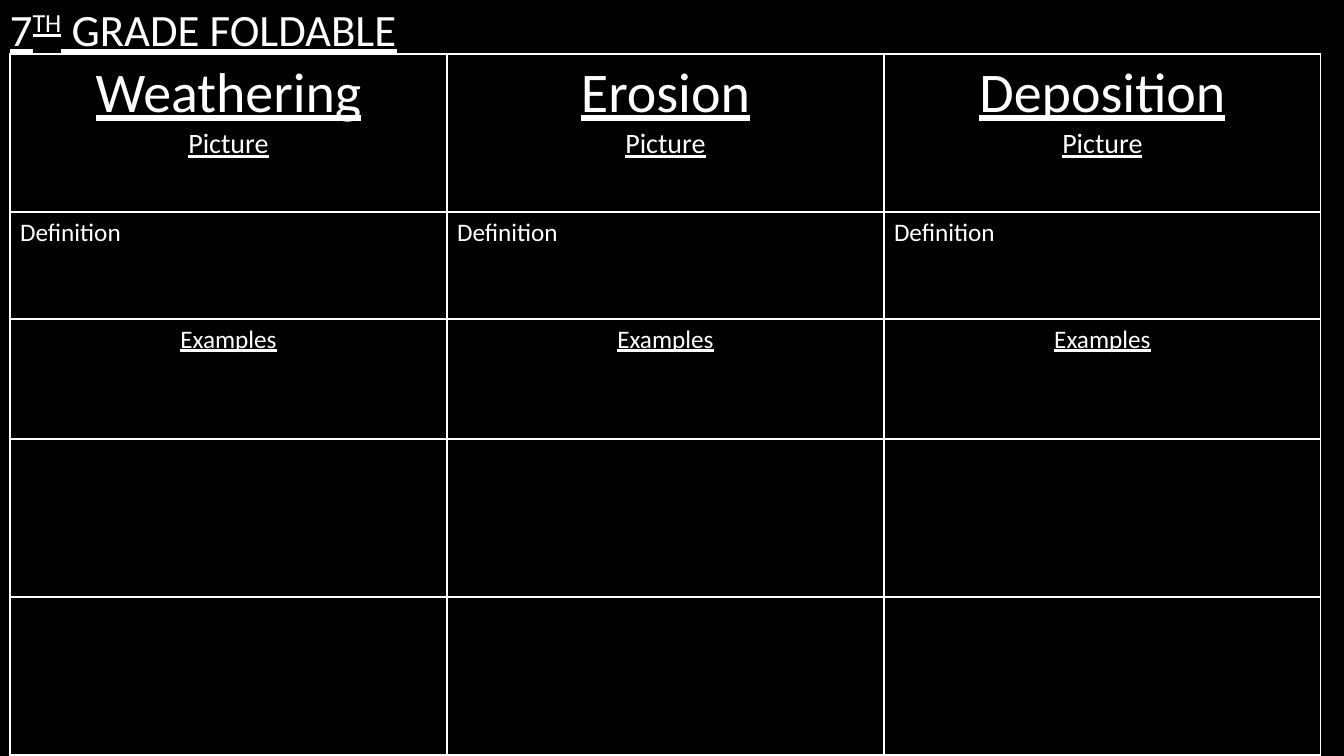
import pptx
import pptx.util
import pptx.dml.color
import pptx.enum.text
import lxml.etree

PX = 914400 / 100.8
BLACK = pptx.dml.color.RGBColor(0, 0, 0)
WHITE = pptx.dml.color.RGBColor(255, 255, 255)
DRAWING = "http://schemas.openxmlformats.org/drawingml/2006/main"
CENTER = pptx.enum.text.PP_ALIGN.CENTER
LEFT = pptx.enum.text.PP_ALIGN.LEFT


def px(length):
    return pptx.util.Emu(round(length * PX))


def style(para, size, underline):
    para.font.name = "Calibri"
    para.font.size = pptx.util.Pt(size)
    para.font.underline = underline
    para.font.color.rgb = WHITE


deck = pptx.Presentation()
deck.slide_width = px(1344)
deck.slide_height = px(756)
page = deck.slides.add_slide(deck.slide_layouts[6])
page.background.fill.solid()
page.background.fill.fore_color.rgb = BLACK

title = page.shapes.add_textbox(px(0), px(-30), px(1117), px(117))
title.text_frame.word_wrap = True
title.text_frame.vertical_anchor = pptx.enum.text.MSO_ANCHOR.MIDDLE
para = title.text_frame.paragraphs[0]
style(para, 32, True)
for text in ("7", "TH", " GRADE FOLDABLE"):
    span = para.add_run()
    span.text = text
    if text == "TH":
        span._r.get_or_add_rPr().set("baseline", "30000")

topics = ["Weathering", "Erosion", "Deposition"]
row_heights = [158, 107, 120, 158, 158]
table = page.shapes.add_table(
    len(row_heights), len(topics), px(10), px(54), px(437 * len(topics)), px(sum(row_heights))
).table
table.first_row = False
table.horz_banding = False
for row, height in zip(table.rows, row_heights):
    row.height = px(height)

for column, topic in enumerate(topics):
    table.columns[column].width = px(437)
    contents = [
        [(topic, 40, True, CENTER), ("Picture", 20, True, CENTER)],
        [("Definition", 18, False, LEFT)],
        [("Examples", 18, True, CENTER)],
        [],
        [],
    ]
    for row, lines in enumerate(contents):
        cell = table.cell(row, column)
        properties = cell._tc.get_or_add_tcPr()
        for side in ("lnL", "lnR", "lnT", "lnB"):
            border = lxml.etree.SubElement(properties, f"{{{DRAWING}}}{side}", w="12700")
            fill = lxml.etree.SubElement(border, f"{{{DRAWING}}}solidFill")
            lxml.etree.SubElement(fill, f"{{{DRAWING}}}srgbClr", val=str(WHITE))
        cell.fill.solid()
        cell.fill.fore_color.rgb = BLACK
        cell.text = "\n".join(line[0] for line in lines)
        for para, (text, size, underline, alignment) in zip(cell.text_frame.paragraphs, lines):
            style(para, size, underline)
            para.alignment = alignment

deck.save("out.pptx")
